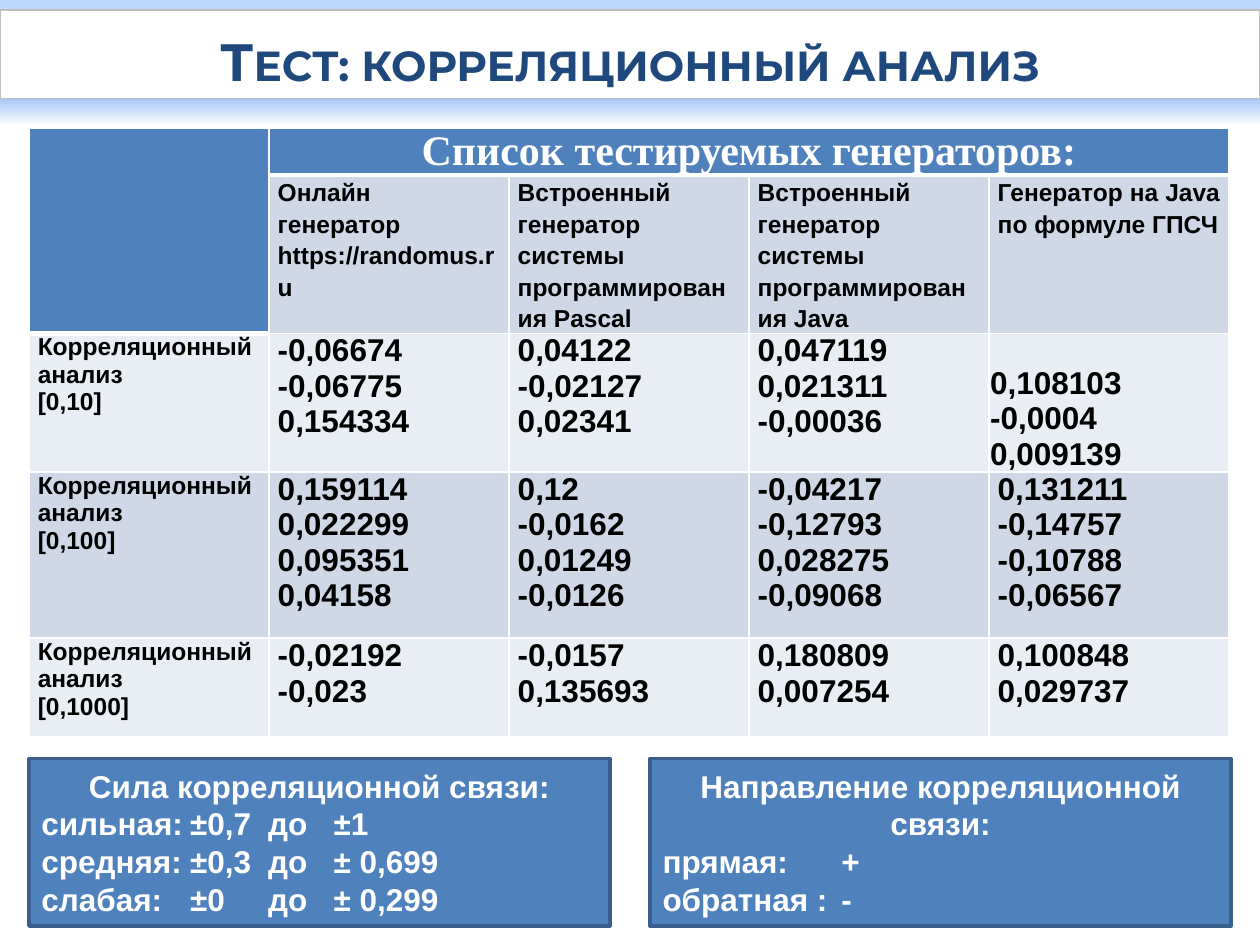
from dataclasses import dataclass

from lxml import etree
from pptx import Presentation
from pptx.dml.color import RGBColor
from pptx.enum.shapes import MSO_SHAPE
from pptx.enum.text import MSO_ANCHOR, PP_ALIGN
from pptx.oxml.ns import qn
from pptx.util import Inches, Pt

RECT = MSO_SHAPE.RECTANGLE
LEFT, CENTER, JUSTIFY = PP_ALIGN.LEFT, PP_ALIGN.CENTER, PP_ALIGN.JUSTIFY
MIDDLE, BOTTOM = MSO_ANCHOR.MIDDLE, MSO_ANCHOR.BOTTOM

WHITE = RGBColor(0xFF, 0xFF, 0xFF)
BLACK = RGBColor(0, 0, 0)
NAVY = RGBColor(0x1F, 0x49, 0x7D)
BLUE = RGBColor(0x4F, 0x81, 0xBD)
DARK_BLUE = RGBColor(0x3A, 0x5F, 0x8C)
GRAY = RGBColor(0xBF, 0xBF, 0xBF)
SKY = RGBColor(0xA6, 0xC7, 0xF6)
PALE_SKY = RGBColor(0xC0, 0xD8, 0xFA)
BAND_DARK = RGBColor(0xD0, 0xD8, 0xE8)
BAND_LIGHT = RGBColor(0xE9, 0xED, 0xF4)

COL_WIDTH = 1.905
ROW_HEIGHTS = (0.33, 1.17, 1.1, 1.32, 0.78)
HEADER = "Список тестируемых генераторов:"
GENERATORS = (
    "Онлайн генератор https://randomus.ru",
    "Встроенный генератор системы программирования Pascal",
    "Встроенный генератор системы программирования Java",
    "Генератор на Java по формуле ГПСЧ",
)


@dataclass
class Analysis:
    interval: str
    fill: RGBColor
    values: tuple[str, ...]


@dataclass
class Legend:
    left: float
    heading: str
    lines: tuple[str, ...]
    tabs: tuple[float, ...]


ANALYSES = (
    Analysis("[0,10]", BAND_LIGHT, (
        "-0,06674\n-0,06775\n0,154334",
        "0,04122\n-0,02127\n0,02341",
        "0,047119\n0,021311\n-0,00036",
        "0,108103\n-0,0004\n0,009139")),
    Analysis("[0,100]", BAND_DARK, (
        "0,159114\n0,022299\n0,095351\n0,04158",
        "0,12\n-0,0162\n0,01249\n-0,0126",
        "-0,04217\n-0,12793\n0,028275\n-0,09068",
        "0,131211\n-0,14757\n-0,10788\n-0,06567")),
    Analysis("[0,1000]", BAND_LIGHT, (
        "-0,02192\n-0,023",
        "-0,0157\n0,135693",
        "0,180809\n0,007254",
        "0,100848\n0,029737")),
)

LEGENDS = (
    Legend(0.23, "Сила корреляционной связи:", (
        "сильная:\t±0,7\tдо\t±1",
        "средняя:\t±0,3\tдо\t± 0,699",
        "слабая:\t±0\tдо\t± 0,299"), (1.18, 1.8, 2.32)),
    Legend(5.16, "Направление корреляционной связи:", (
        "прямая:\t+",
        "обратная :\t-"), (1.42,)),
)


def style(p, size: float, color: RGBColor, align, font: str = "Arial") -> None:
    p.alignment = align
    for r in p.runs:
        r.font.name = font
        r.font.size = Pt(size)
        r.font.bold = True
        r.font.color.rgb = color


def add_box(s, left: float, top: float, width: float, height: float):
    sp = s.shapes.add_shape(RECT, Inches(left), Inches(top), Inches(width), Inches(height))
    sp.shadow.inherit = False
    sp.text_frame.word_wrap = True
    return sp


def paint(sp, fill: RGBColor, line: RGBColor, width: float) -> None:
    sp.fill.solid()
    sp.fill.fore_color.rgb = fill
    sp.line.color.rgb = line
    sp.line.width = Pt(width)


def add_band(s) -> None:
    sp = add_box(s, 0, 0, 10, 0.78)
    glow = add_box(s, 0, 0.78, 10, 0.22)
    for band, colors in ((sp, (PALE_SKY, SKY)), (glow, (SKY, WHITE))):
        band.line.fill.background()
        band.fill.gradient()
        band.fill.gradient_angle = 270
        for stop, color in zip(band.fill.gradient_stops, colors):
            stop.color.rgb = color


def add_title(s) -> None:
    sp = add_box(s, 0, 0.08, 10, 0.7)
    paint(sp, WHITE, GRAY, 0.75)
    tf = sp.text_frame
    tf.text = "Тест: корреляционный анализ"
    tf.vertical_anchor = BOTTOM
    p = tf.paragraphs[0]
    style(p, 30, NAVY, CENTER, "Montserrat")
    p.runs[0].font._element.set("cap", "small")


def set_borders(cell, bottom: float) -> None:
    tcPr = cell._tc.get_or_add_tcPr()
    for side, width in (("L", 1), ("R", 1), ("T", 1), ("B", bottom)):
        ln = etree.SubElement(tcPr, qn(f"a:ln{side}"), w=str(Pt(width)))
        fill = etree.SubElement(ln, qn("a:solidFill"))
        etree.SubElement(fill, qn("a:srgbClr"), val=str(WHITE))


def fill_cell(cell, text: str, fill: RGBColor, size: float, color: RGBColor = BLACK,
              align=JUSTIFY, font: str = "Arial", spacing: float = 1.0,
              bottom: float = 1) -> None:
    set_borders(cell, bottom)
    cell.fill.solid()
    cell.fill.fore_color.rgb = fill
    cell.margin_left = cell.margin_right = Inches(0.07)
    cell.margin_top = cell.margin_bottom = 0
    cell.text_frame.text = text
    for p in cell.text_frame.paragraphs:
        style(p, size, color, align, font)
        p.line_spacing = spacing


def add_results(s) -> None:
    cols = len(GENERATORS) + 1
    frame = s.shapes.add_table(len(ROW_HEIGHTS), cols, Inches(0.23), Inches(1.02),
                               Inches(COL_WIDTH * cols), Inches(sum(ROW_HEIGHTS)))
    table = frame.table
    table.first_row = table.horz_banding = False
    for column in table.columns:
        column.width = Inches(COL_WIDTH)
    for row, height in zip(table.rows, ROW_HEIGHTS):
        row.height = Inches(height)
    for c in range(cols):
        fill_cell(table.cell(0, c), HEADER if c == 1 else "", BLUE, 24, WHITE,
                  CENTER, "Times New Roman", bottom=3)
    fill_cell(table.cell(1, 0), "", BLUE, 14, bottom=3)
    table.cell(0, 0).merge(table.cell(1, 0))
    table.cell(0, 1).merge(table.cell(0, cols - 1))
    for c, name in enumerate(GENERATORS, 1):
        fill_cell(table.cell(1, c), name, BAND_DARK, 14, spacing=1.15)
    for r, analysis in enumerate(ANALYSES, 2):
        label = f"Корреляционный анализ\n{analysis.interval}"
        fill_cell(table.cell(r, 0), label, analysis.fill, 14)
        for c, values in enumerate(analysis.values, 1):
            fill_cell(table.cell(r, c), values, analysis.fill, 18)
    low_cell = table.cell(2, cols - 1)
    low_cell.vertical_anchor = BOTTOM
    low_cell.margin_left = low_cell.margin_right = low_cell.margin_top = Inches(0.01)


def add_legend(s, legend: Legend) -> None:
    sp = add_box(s, legend.left, 6.02, 4.61, 1.33)
    paint(sp, BLUE, DARK_BLUE, 2)
    tf = sp.text_frame
    tf.vertical_anchor = MIDDLE
    tf.text = "\n".join((legend.heading, *legend.lines))
    heading, *lines = tf.paragraphs
    style(heading, 18, WHITE, CENTER)
    for p in lines:
        tabs = etree.SubElement(p._p.get_or_add_pPr(), qn("a:tabLst"))
        for pos in legend.tabs:
            etree.SubElement(tabs, qn("a:tab"), pos=str(Inches(pos)), algn="l")
        style(p, 18, WHITE, LEFT)


def main() -> None:
    prs = Presentation()
    prs.slide_width, prs.slide_height = Inches(10), Inches(7.5)
    s = prs.slides.add_slide(prs.slide_layouts[6])
    add_band(s)
    add_title(s)
    add_results(s)
    for legend in LEGENDS:
        add_legend(s, legend)
    prs.save("out.pptx")


if __name__ == "__main__":
    main()
